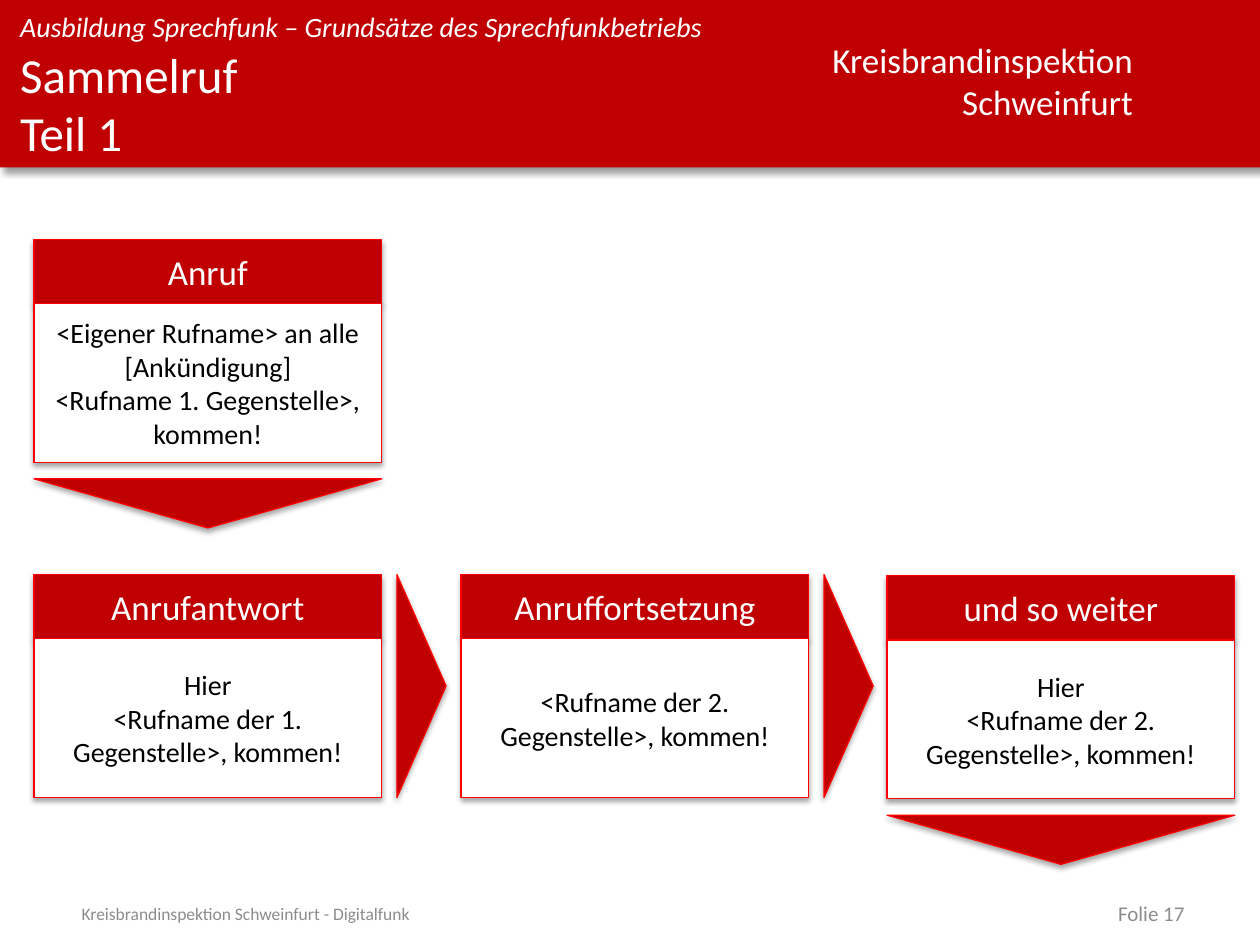
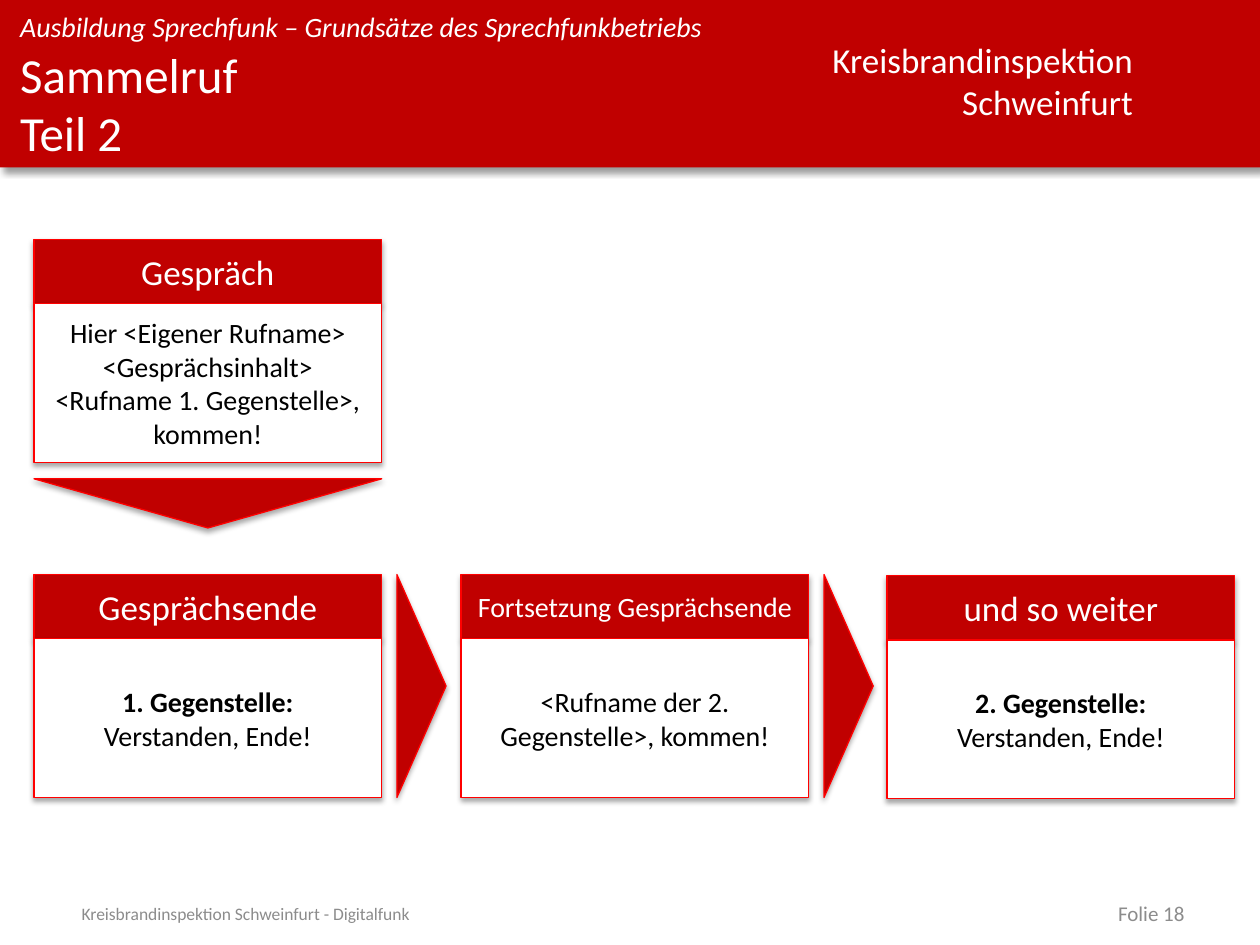
from dataclasses import dataclass
from lxml import etree
from pptx import Presentation
from pptx.dml.color import RGBColor as RGB
from pptx.enum.shapes import MSO_SHAPE as Shape
from pptx.enum.text import MSO_ANCHOR as Anchor, MSO_AUTO_SIZE as Fit, PP_ALIGN as Align
from pptx.oxml.ns import qn
from pptx.util import Inches, Pt


@dataclass(frozen=True)
class Theme:
    font: str = "Calibri"
    red: RGB = RGB(0xC0, 0x00, 0x00)
    edge: RGB = RGB(0xFF, 0x00, 0x00)
    white: RGB = RGB(0xFF, 0xFF, 0xFF)
    black: RGB = RGB(0x00, 0x00, 0x00)
    gray: RGB = RGB(0x8C, 0x8C, 0x8C)
    title: int = 28
    head: int = 20
    body: int = 16
    page: int = 12
    foot: int = 10


T = Theme()
LEFT, MID, RIGHT = Align.LEFT, Align.CENTER, Align.RIGHT

# Card grid: three columns, head above body
WIDE, HEAD, BODY, TIP = 2.76, 0.51, 1.26, 0.39
TALL = HEAD + BODY
SPOTS = [(0.27, 1.9), (0.27, 4.56), (3.66, 4.56), (7.04, 4.57)]

# Head, head size, body lines, arrow to the next card
DECK = [
    ("Teil 1", "Folie 17", [
        ("Anruf", T.head, ["<Eigener Rufname> an alle", "[Ankündigung]",
                           "<Rufname 1. Gegenstelle>,", "kommen!"], "down"),
        ("Anrufantwort", T.head,
         ["Hier", "<Rufname der 1. Gegenstelle>, kommen!"], "right"),
        ("Anruffortsetzung", T.head,
         ["<Rufname der 2. Gegenstelle>, kommen!"], "right"),
        ("und so weiter", T.head,
         ["Hier", "<Rufname der 2. Gegenstelle>, kommen!"], "down"),
    ]),
    ("Teil 2", "Folie 18", [
        ("Gespräch", T.head, ["Hier <Eigener Rufname>", "<Gesprächsinhalt>",
                              "<Rufname 1. Gegenstelle>,", "kommen!"], "down"),
        ("Gesprächsende", T.head,
         ["1. Gegenstelle:", "Verstanden, Ende!"], "right"),
        ("Fortsetzung Gesprächsende", T.body,
         ["<Rufname der 2. Gegenstelle>, kommen!"], "right"),
        ("und so weiter", T.head,
         ["2. Gegenstelle:", "Verstanden, Ende!"], None),
    ]),
]


def write(shape, lines, size, color, align, anchor=Anchor.MIDDLE, italic=False):
    frame = shape.text_frame
    frame.word_wrap = True
    frame.vertical_anchor = anchor
    for i, line in enumerate(lines):
        para = frame.paragraphs[0] if i == 0 else frame.add_paragraph()
        para.alignment = align
        run = para.add_run()
        run.text = line
        font = run.font
        font.name, font.size, font.color.rgb = T.font, Pt(size), color
        font.italic = italic
        font.bold = line.endswith(":")  # speaker labels
    return frame


def block(slide, kind, box, fill, edge=T.edge, shade=(35, 3.1, 1.8, 90)):
    shape = slide.shapes.add_shape(kind, *map(Inches, box))
    shape.fill.solid()
    shape.fill.fore_color.rgb = fill
    if edge is None:
        shape.line.fill.background()
    else:
        shape.line.color.rgb = edge
        shape.line.width = Pt(0.75)
    # Drop shadow
    shape.shadow.inherit = False
    alpha, blur, dist, angle = shade
    cast = etree.SubElement(
        shape._element.spPr.find(qn("a:effectLst")), qn("a:outerShdw"),
        blurRad=str(Pt(blur)), dist=str(Pt(dist)), dir=str(angle * 60000),
        algn="t", rotWithShape="0")
    tone = etree.SubElement(cast, qn("a:srgbClr"), val="000000")
    etree.SubElement(tone, qn("a:alpha"), val=str(alpha * 1000))
    return shape


prs = Presentation()
prs.slide_width, prs.slide_height = Inches(10), Inches(7.5)

for part, page, cards in DECK:
    slide = prs.slides.add_slide(prs.slide_layouts[5])

    # Band with unit name and course line
    block(slide, Shape.RECTANGLE, (0, 0, 10, 1.33), T.red, None, (40, 4, 3, 45))
    unit = slide.shapes.add_textbox(Inches(6.48), Inches(0.26), Inches(2.61), Inches(0.77))
    frame = write(unit, ["Kreisbrandinspektion", "Schweinfurt"],
                  T.head, T.white, RIGHT, Anchor.TOP)
    frame.word_wrap = False
    course = slide.shapes.add_textbox(Inches(0.16), Inches(0.08), Inches(6.32), Inches(0.27))
    frame = write(course, ["Ausbildung Sprechfunk – Grundsätze des Sprechfunkbetriebs"],
                  T.body, T.white, LEFT, Anchor.TOP, True)
    frame.margin_left = frame.margin_right = frame.margin_top = frame.margin_bottom = 0

    # Title, raised above the band
    title = slide.shapes.title
    title.left, title.top = Inches(0.16), Inches(0.35)
    title.width, title.height = Inches(6.32), Inches(0.99)
    frame = write(title, ["Sammelruf"], T.title, T.white, LEFT, Anchor.TOP)
    frame.margin_left = frame.margin_right = frame.margin_top = frame.margin_bottom = 0
    frame.auto_size = Fit.NONE
    para = frame.paragraphs[0]
    para.add_line_break()
    run = para.add_run()
    run.text = part
    run.font.name, run.font.size, run.font.color.rgb = T.font, Pt(T.title), T.white
    slide.shapes._spTree.append(title._element)

    # Footer
    for x, wide, text, size, align in [
        (0.55, 6.04, "Kreisbrandinspektion Schweinfurt - Digitalfunk", T.foot, LEFT),
        (7.17, 2.33, page, T.page, RIGHT),
    ]:
        foot = slide.shapes.add_textbox(Inches(x), Inches(7.15), Inches(wide), Inches(0.2))
        write(foot, [text], size, T.gray, align)

    # Cards and arrows
    for (x, y), (head, size, body, arrow) in zip(SPOTS, cards):
        top = block(slide, Shape.RECTANGLE, (x, y, WIDE, HEAD), T.red)
        write(top, [head], size, T.white, MID)
        base = block(slide, Shape.RECTANGLE, (x, y + HEAD, WIDE, BODY), T.white)
        write(base, body, T.body, T.black, MID)
        if arrow == "down":
            tip = block(slide, Shape.ISOSCELES_TRIANGLE,
                        (x, y + TALL + 0.13, WIDE, TIP), T.red)
            tip.rotation = 180
        elif arrow == "right":
            # The frame turns about its centre
            mid = x + WIDE + 0.12 + TIP / 2
            tip = block(slide, Shape.ISOSCELES_TRIANGLE,
                        (mid - TALL / 2, y + (TALL - TIP) / 2, TALL, TIP), T.red)
            tip.rotation = 90

prs.save("out.pptx")
